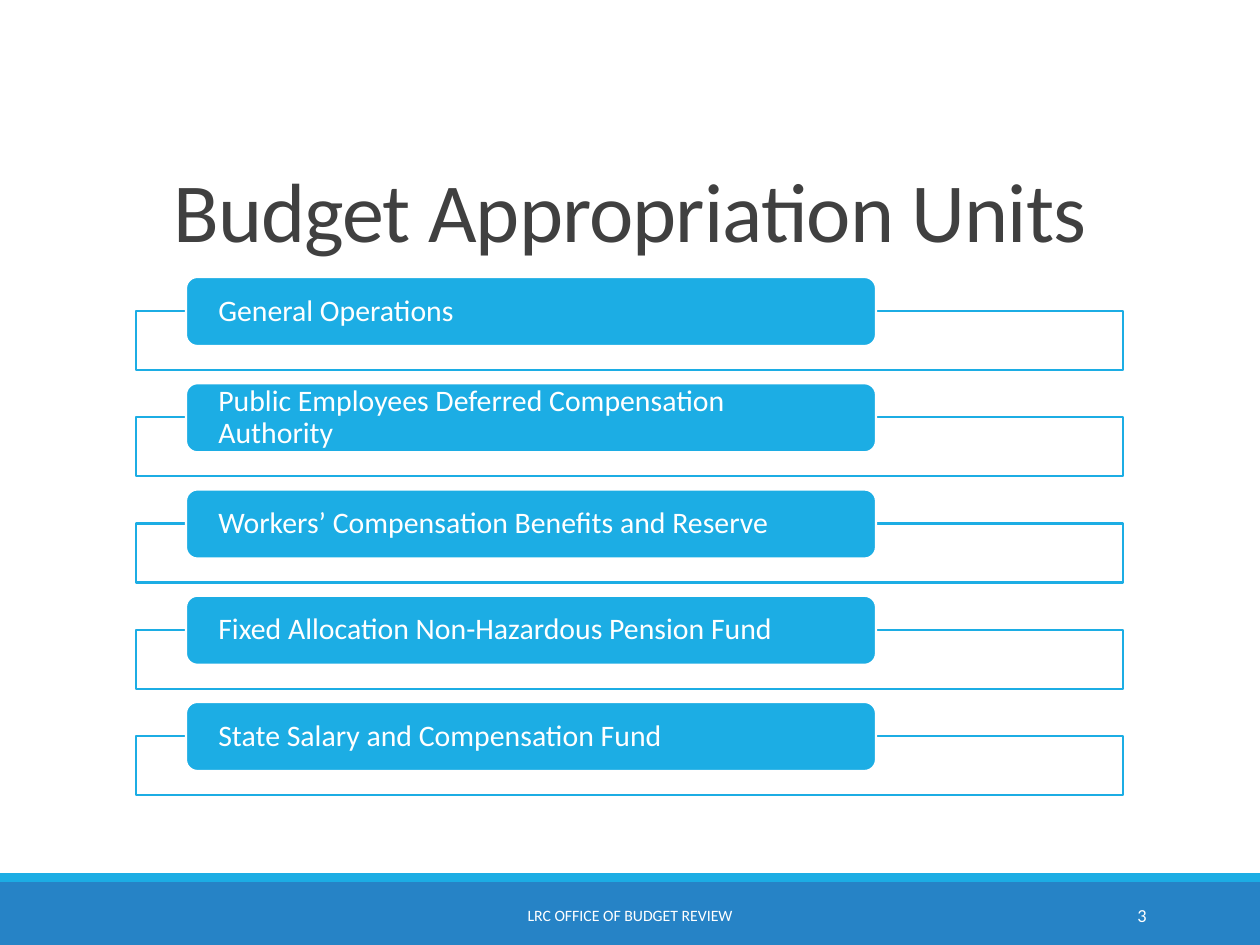
from pptx import Presentation
from pptx import util as u
from pptx.dml.color import RGBColor
from pptx.enum import shapes, text
from pptx.oxml.ns import qn
from lxml import etree

EMU_PER_PX = 914400 / 126
COLORS = {"sky": "1CADE4", "blue": "2683C6", "white": "FFFFFF", "ink": "404040"}
UNITS = [
    "General Operations",
    "Public Employees Deferred Compensation Authority",
    "Workers’ Compensation Benefits and Reserve",
    "Fixed Allocation Non-Hazardous Pension Fund",
    "State Salary and Compensation Fund",
]


def px(*lengths):
    return [u.Emu(round(length * EMU_PER_PX)) for length in lengths]


def rgb(name):
    return RGBColor.from_string(COLORS[name])


def add_block(slide, kind, box, fill, line=None):
    block = slide.shapes.add_shape(kind, *px(*box))
    block.shadow.inherit = False
    block.fill.solid()
    block.fill.fore_color.rgb = rgb(fill)
    if line:
        block.line.color.rgb = rgb(line)
        block.line.width = u.Pt(1.25)
    else:
        block.line.fill.background()
    return block


def write(holder, wording, size, color, align, anchor=text.MSO_ANCHOR.MIDDLE):
    frame = holder.text_frame
    frame.word_wrap = True
    frame.vertical_anchor = anchor
    frame.text = wording
    paragraph = frame.paragraphs[0]
    paragraph.alignment = align
    font = paragraph.runs[0].font
    font.name = "Calibri"
    font.size = u.Pt(size)
    font.color.rgb = rgb(color)
    return paragraph


def add_title(slide, box):
    title = slide.shapes.add_textbox(*px(*box))
    line = write(title, "Budget Appropriation Units", 48, "ink",
                 text.PP_ALIGN.CENTER, text.MSO_ANCHOR.TOP)
    line.line_spacing = 0.85
    line.runs[0].font._element.set("spc", "-50")


def add_unit(slide, box, name):
    left, top, width, height = box
    frame = add_block(slide, shapes.MSO_SHAPE.RECTANGLE,
                      (left, top + 34, width, height - 34), "white", "sky")
    white = frame.fill._xPr.find(qn("a:solidFill"))[0]
    etree.SubElement(white, qn("a:alpha")).set("val", "90000")

    label = add_block(slide, shapes.MSO_SHAPE.ROUNDED_RECTANGLE,
                      (left + 50, top, 690, 69), "sky", "white")
    inset, none = px(29, 0)
    margins = label.text_frame
    margins.margin_left = margins.margin_right = inset
    margins.margin_top = margins.margin_bottom = none
    write(label, name, 17, "white", text.PP_ALIGN.LEFT).line_spacing = 0.9


def add_units(slide, box):
    left, top, width, height = box
    row_height = 93
    pitch = (height - row_height) / (len(UNITS) - 1)
    for row, name in enumerate(UNITS):
        add_unit(slide, (left, top + pitch * row, width, row_height), name)


def add_footer(slide, box):
    left, top, width, height = box
    stripe = 9
    band_top = top + stripe
    add_block(slide, shapes.MSO_SHAPE.RECTANGLE,
              (left, band_top, width, height - stripe), "blue")
    add_block(slide, shapes.MSO_SHAPE.RECTANGLE, (left, top, width, stripe), "sky")
    office = slide.shapes.add_textbox(*px(left + 381, band_top + 8, 498, 50))
    write(office, "LRC OFFICE OF BUDGET REVIEW", 9, "white", text.PP_ALIGN.CENTER)
    page = slide.shapes.add_textbox(*px(left + 1023, band_top + 8, 136, 50))
    write(page, "3", 10.5, "white", text.PP_ALIGN.RIGHT)


def main():
    deck = Presentation()
    deck.slide_width, deck.slide_height = px(1260, 945)
    slide = deck.slides.add_slide(deck.slide_layouts[6])
    add_footer(slide, (0, 873, 1260, 72))
    add_title(slide, (110, 168, 1040, 200))
    add_units(slide, (136, 277, 987, 518))
    deck.save("out.pptx")


if __name__ == "__main__":
    main()
